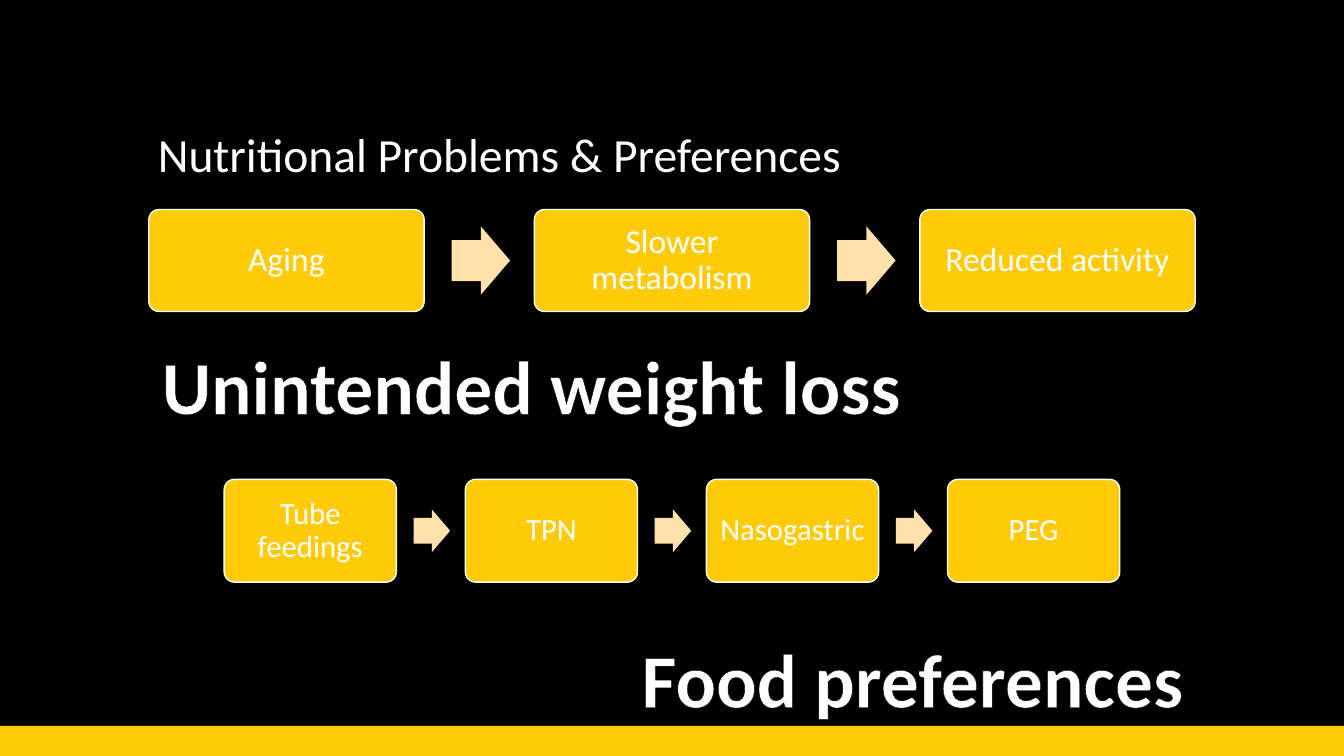
from lxml import etree
from pptx import Presentation
from pptx import util as u
from pptx.dml.color import RGBColor
from pptx.enum import shapes, text
from pptx.oxml.ns import qn

GOLD, CREAM, WHITE, BLACK = "FFCA08", "FFE1AB", "FFFFFF", "000000"


def paint(fill, color):
    fill.solid()
    fill.fore_color.rgb = RGBColor.from_string(color)


def add_shape(slide, kind, x, y, w, h, color):
    sp = slide.shapes.add_shape(kind, u.Cm(x), u.Cm(y), u.Cm(w), u.Cm(h))
    sp.shadow.inherit = False
    paint(sp.fill, color)
    sp.line.fill.background()
    return sp


def write(sp, words, size, align, bold=False, spacing=None):
    p = sp.text_frame.paragraphs[0]
    r = p.add_run()
    r.text = words
    p.alignment = align
    p.line_spacing = spacing
    p.font.name = "Calibri"
    p.font.size = u.Pt(size)
    p.font.bold = bold
    paint(p.font.fill, WHITE)
    return r


def add_title(slide, x, y, w, h, words):
    sp = slide.shapes.add_textbox(u.Cm(x), u.Cm(y), u.Cm(w), u.Cm(h))
    sp.text_frame.word_wrap = True
    sp.text_frame.vertical_anchor = text.MSO_ANCHOR.BOTTOM
    write(sp, words, 34, text.PP_ALIGN.LEFT, spacing=0.9)


def add_headline(slide, x, y, w, h, words):
    sp = slide.shapes.add_textbox(u.Cm(x), u.Cm(y), u.Cm(w), u.Cm(h))
    sp.text_frame.word_wrap = False
    sp.text_frame.auto_size = text.MSO_AUTO_SIZE.SHAPE_TO_FIT_TEXT
    r = write(sp, words, 54, text.PP_ALIGN.CENTER, bold=True)
    # Thin black outline around the letters
    ln = etree.Element(qn("a:ln"), w=str(u.Pt(1.06)))
    fill = etree.SubElement(ln, qn("a:solidFill"))
    etree.SubElement(fill, qn("a:srgbClr"), val=BLACK)
    r.font._element.insert(0, ln)


def add_process(slide, x, y, w, h, steps, size):
    """Row of steps; gaps and arrows are fractions of the step width."""
    step_w = w / (1 + 1.4 * (len(steps) - 1))
    arrow_w, arrow_h = 0.212 * step_w, 0.248 * step_w
    for i, words in enumerate(steps):
        left = x + 1.4 * step_w * i
        # Arrow from the previous step
        if i:
            arrow = add_shape(slide, shapes.MSO_SHAPE.RIGHT_ARROW, left - 0.3 * step_w,
                              y + (h - arrow_h) / 2, arrow_w, arrow_h, CREAM)
            arrow.adjustments[0] = 0.6
        # Step box
        sp = add_shape(slide, shapes.MSO_SHAPE.ROUNDED_RECTANGLE, left, y, step_w, h, GOLD)
        sp.adjustments[0] = 0.1
        paint(sp.line.fill, WHITE)
        sp.line.width = u.Pt(1)
        tf = sp.text_frame
        tf.word_wrap = True
        tf.vertical_anchor = text.MSO_ANCHOR.MIDDLE
        tf.margin_left = tf.margin_right = tf.margin_top = tf.margin_bottom = u.Cm(0.2)
        write(sp, words, size, text.PP_ALIGN.CENTER, spacing=0.9)


def main():
    prs = Presentation()
    prs.slide_width, prs.slide_height = u.Cm(33.87), u.Cm(19.05)
    slide = prs.slides.add_slide(prs.slide_layouts[6])
    paint(slide.background.fill, BLACK)

    # Bottom band
    add_shape(slide, shapes.MSO_SHAPE.RECTANGLE, 0, 18.29, 33.87, 0.76, GOLD)

    # Title and causes
    add_title(slide, 3.73, 1.3, 26.42, 3.43, "Nutritional Problems & Preferences")
    add_process(slide, 3.75, 5.28, 26.37, 2.57,
                ["Aging", "Slower metabolism", "Reduced activity"], 24)

    # Weight loss and feeding methods
    add_headline(slide, 3.73, 8.41, 19.33, 2.57, "Unintended weight loss")
    add_process(slide, 5.65, 12.08, 22.57, 2.59,
                ["Tube feedings", "TPN", "Nasogastric", "PEG"], 22)

    # Closing headline
    add_headline(slide, 15.85, 15.8, 14.3, 2.57, "Food preferences")

    prs.save("out.pptx")


if __name__ == "__main__":
    main()
